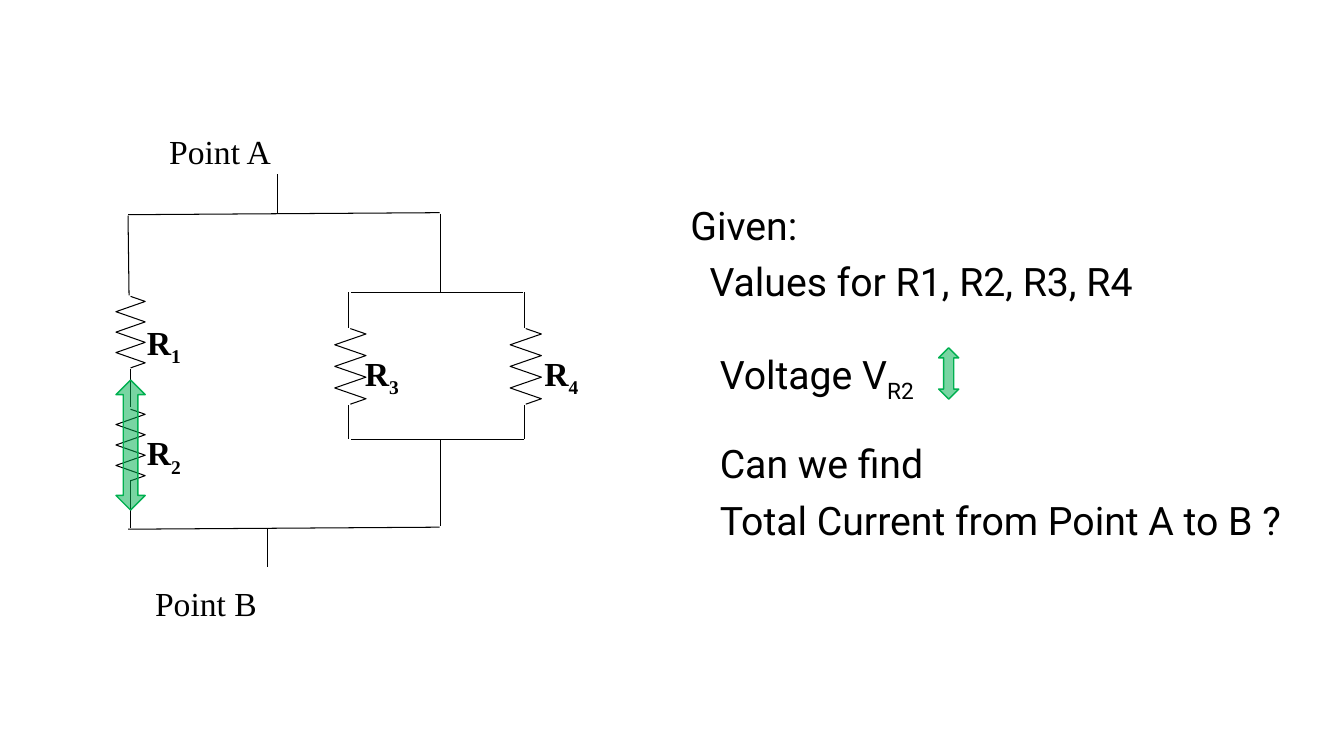
from dataclasses import dataclass

from lxml.etree import SubElement
from pptx import Presentation
from pptx.dml.color import RGBColor
from pptx.enum.shapes import MSO_CONNECTOR, MSO_SHAPE
from pptx.oxml.ns import qn
from pptx.util import Inches, Pt


@dataclass(frozen=True)
class Theme:
    """Colours, fonts and type sizes of the slide."""
    ink: RGBColor = RGBColor(0, 0, 0)
    voltage: RGBColor = RGBColor(0x00, 0xB0, 0x50)
    voltage_alpha: int = 53000
    label_font: str = "Times New Roman"
    body_font: str = "Roboto"
    label_size: int = 24
    body_size: int = 28
    wire_width: float = 0.75
    arrow_width: float = 1


THEME = Theme()

WIRES = [
    (2.75, 1.73, 2.75, 2.12), (1.27, 2.13, 4.36, 2.11),
    (1.28, 2.93, 1.27, 2.14), (1.29, 3.66, 1.29, 4.04),
    (1.29, 4.76, 1.29, 5.24), (1.27, 5.25, 4.36, 5.23),
    (2.65, 5.24, 2.65, 5.63), (4.37, 2.12, 4.37, 2.9),
    (3.48, 2.9, 5.19, 2.9), (5.2, 4.36, 3.48, 4.36),
    (4.37, 5.22, 4.37, 4.36),
] + [(x, top, x, bottom) for x in (3.46, 5.2)
     for top, bottom in ((2.9, 3.25), (4.02, 4.36))]

RESISTORS = [
    (1.15, 2.94, 0.29, 0.71), (1.15, 4.06, 0.29, 0.71),
    (3.32, 3.26, 0.31, 0.75), (5.06, 3.26, 0.31, 0.75),
]

LABELS = [
    ("R", "1", 1.36, 3.14), ("R", "2", 1.36, 4.24),
    ("R", "3", 3.52, 3.45), ("R", "4", 5.3, 3.45),
    ("Point A", "", 1.58, 1.25), ("Point B", "", 1.44, 5.73),
]

QUESTION = [
    ("Given:", "", 0, 10),
    ("Values for R1, R2, R3, R4", "", 0.19, 10),
    ("Voltage V", "R2", 0.29, 32.65),
    ("Can we find", "", 0.29, 32.65),
    ("Total Current from Point A to B ?", "", 0.29, 10),
]


def add_span(para, text, font, size, bold=False, subscript=False):
    """Add one run of text to a paragraph."""
    span = para.add_run()
    span.text = text
    span.font.name = font
    span.font.size = Pt(size)
    span.font.bold = bold
    span.font.color.rgb = THEME.ink
    if subscript:
        span._r.get_or_add_rPr().set("baseline", "-25000")


def add_box(page, left, top, width, height):
    """Add a wrapping text box and return its text frame."""
    box = page.shapes.add_textbox(*map(Inches, (left, top, width, height)))
    box.text_frame.word_wrap = True
    return box.text_frame


def add_label(page, text, subscript, left, top):
    """Name a resistor or a terminal point."""
    para = add_box(page, left, top, 1.6, 0.5).paragraphs[0]
    add_span(para, text, THEME.label_font, THEME.label_size, bool(subscript))
    if subscript:
        add_span(para, subscript, THEME.label_font, THEME.label_size, True, True)


def add_wire(page, *ends):
    """Draw a straight wire between two ends."""
    wire = page.shapes.add_connector(MSO_CONNECTOR.STRAIGHT, *map(Inches, ends))
    wire.line.color.rgb = THEME.ink
    wire.line.width = Pt(THEME.wire_width)
    SubElement(wire._element.spPr, qn("a:effectLst"))


def add_resistor(page, left, top, width, height):
    """Draw a vertical zigzag with seven alternating peaks."""
    middle = left + width / 2
    peaks = [(left + width * (1 - i % 2), top + height * (2 * i + 1) / 14)
             for i in range(7)]
    points = [(Inches(x), Inches(y)) for x, y in peaks + [(middle, top + height)]]
    builder = page.shapes.build_freeform(Inches(middle), Inches(top))
    builder.add_line_segments(points, close=False)
    zigzag = builder.convert_to_shape()
    zigzag.shadow.inherit = False
    zigzag.fill.background()
    zigzag.line.color.rgb = THEME.ink
    zigzag.line.width = Pt(THEME.wire_width)


def add_voltage_arrow(page, left, top, width, height):
    """Draw a translucent double arrow that marks a voltage."""
    arrow = page.shapes.add_shape(
        MSO_SHAPE.UP_DOWN_ARROW, *map(Inches, (left, top, width, height)))
    arrow.shadow.inherit = False
    arrow.fill.solid()
    arrow.fill.fore_color.rgb = THEME.voltage
    colour = arrow._element.spPr.find(qn("a:solidFill")).find(qn("a:srgbClr"))
    SubElement(colour, qn("a:alpha")).set("val", str(THEME.voltage_alpha))
    arrow.line.color.rgb = THEME.voltage
    arrow.line.width = Pt(THEME.arrow_width)


def add_question(page):
    """Write the given values and the question."""
    frame = add_box(page, 6.75, 2, 6.32, 4.76)
    for i, (text, subscript, indent, space) in enumerate(QUESTION):
        para = frame.add_paragraph() if i else frame.paragraphs[0]
        para.line_spacing = 0.9
        para.space_before = Pt(space)
        para._p.get_or_add_pPr().set("marL", str(Inches(indent)))
        add_span(para, text, THEME.body_font, THEME.body_size)
        if subscript:
            add_span(para, subscript, THEME.body_font, THEME.body_size,
                     subscript=True)


def main():
    """Build the circuit slide and save the deck."""
    deck = Presentation()
    deck.slide_width, deck.slide_height = Inches(13.33), Inches(7.5)
    page = deck.slides.add_slide(deck.slide_layouts[6])
    add_question(page)
    for label in LABELS:
        add_label(page, *label)
    for wire in WIRES:
        add_wire(page, *wire)
    for resistor in RESISTORS:
        add_resistor(page, *resistor)
    add_voltage_arrow(page, 1.15, 3.77, 0.29, 1.29)
    add_voltage_arrow(page, 9.31, 3.45, 0.2, 0.51)
    deck.save("out.pptx")


if __name__ == "__main__":
    main()
